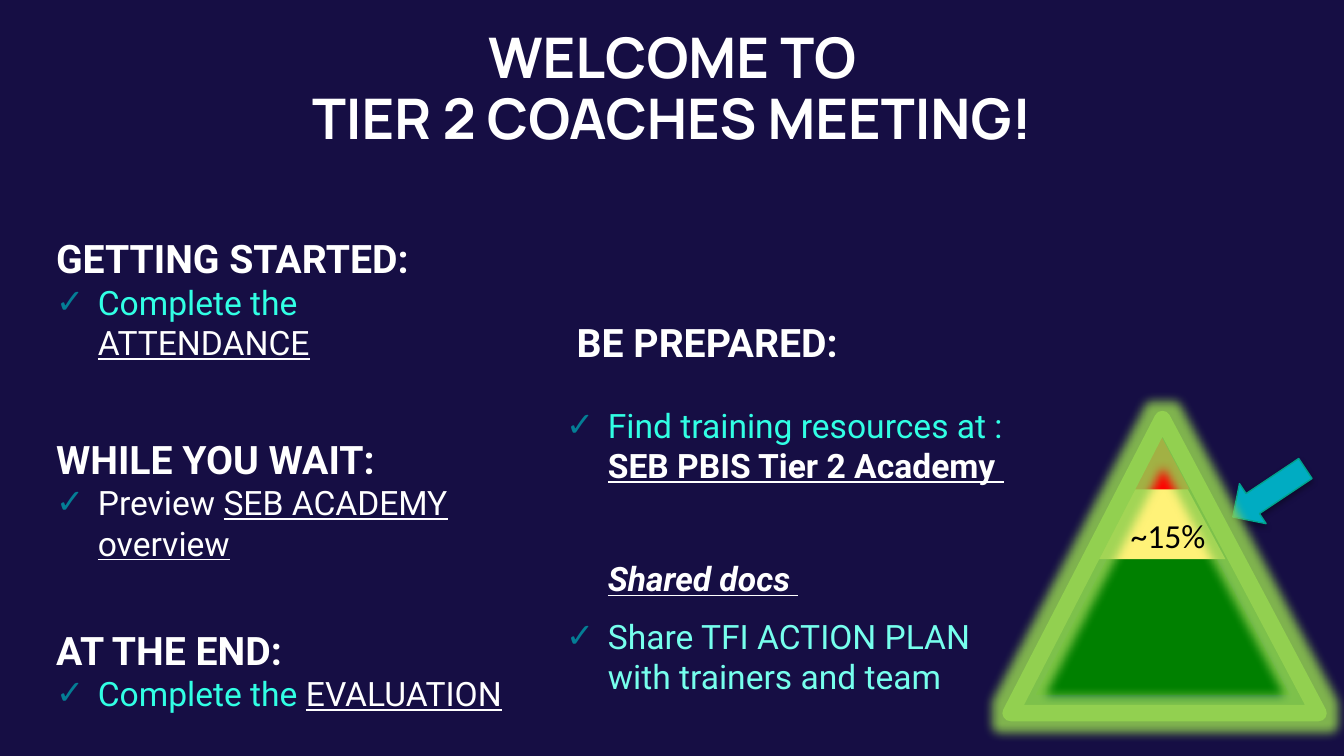
from lxml.etree import SubElement
from pptx import Presentation
from pptx.dml.color import RGBColor
from pptx.enum.shapes import MSO_SHAPE as Shape
from pptx.enum.text import MSO_ANCHOR as Anchor, PP_ALIGN as Align
from pptx.oxml.ns import qn
from pptx.util import Cm, Pt

COLORS = {
    "navy": "160E44", "white": "FFFFFF", "black": "000000",
    "mint": "31FFE4", "aqua": "76FFED", "check": "047E95",
    "arrow": "00ACC2", "arrow_edge": "00A38E",
    "green": "008000", "dark_green": "097233", "lime": "92D050",
    "yellow": "FFF278", "red": "FF0000",
}


def rgb(name):
    return RGBColor.from_string(COLORS[name])


def add_run(p, text, size=18, color="white", font="Roboto",
            bold=False, italic=False, underline=False):
    r = p.add_run()
    r.text = text
    f = r.font
    f.name, f.size, f.bold, f.italic = font, Pt(size), bold, italic
    f.underline = underline
    f.color.rgb = rgb(color)


def add_color(parent, name, alpha):
    clr = SubElement(parent, qn("a:srgbClr"), val=COLORS[name])
    SubElement(clr, qn("a:alpha"), val=str(alpha * 1000))


class Deck:
    def __init__(self):
        self.prs = Presentation()
        self.prs.slide_width, self.prs.slide_height = Cm(25.4), Cm(14.29)
        self.s = self.prs.slides.add_slide(self.prs.slide_layouts[6])
        self.s.background.fill.solid()
        self.s.background.fill.fore_color.rgb = rgb("navy")

    def text_box(self, box, inset=0.25, anchor=Anchor.TOP, shapes=None):
        sp = (shapes or self.s.shapes).add_textbox(*map(Cm, box))
        tf = sp.text_frame
        tf.word_wrap = True
        tf.vertical_anchor = anchor
        tf.margin_left = tf.margin_right = Cm(inset)
        tf.margin_top = tf.margin_bottom = Cm(inset)
        return tf

    def paragraph(self, tf, *runs, before=0, after=0, indent=0, check=False):
        p = tf.paragraphs[0]
        if p.runs:
            p = tf.add_paragraph()
        pPr = p._p.get_or_add_pPr()
        pPr.set("marL", str(Cm(indent)))
        pPr.set("indent", str(-Cm(indent) if check else 0))
        if check:
            clr = SubElement(pPr, qn("a:buClr"))
            SubElement(clr, qn("a:srgbClr"), val=COLORS["check"])
            SubElement(pPr, qn("a:buFont"), typeface="Roboto")
            SubElement(pPr, qn("a:buChar"), char="✓")
        p.space_before, p.space_after = Pt(before), Pt(after)
        for text, fmt in runs:
            add_run(p, text, **fmt)
        return p

    def heading(self, tf, text, **spacing):
        self.paragraph(tf, (text, dict(size=21, bold=True)), **spacing)

    def item(self, tf, *runs, check=True, before=0):
        self.paragraph(tf, *runs, before=before, after=9, indent=0.79, check=check)

    def shape(self, kind, box, fill=None, line=None, width=0, shapes=None):
        sp = (shapes or self.s.shapes).add_shape(kind, *map(Cm, box))
        sp.shadow.inherit = False
        if fill:
            sp.fill.solid()
            sp.fill.fore_color.rgb = rgb(fill)
        else:
            sp.fill.background()
        if line:
            sp.line.color.rgb = rgb(line)
            sp.line.width = Pt(width)
        else:
            sp.line.fill.background()
        return sp

    def triangle(self, box, **style):
        sp = self.shape(Shape.ISOSCELES_TRIANGLE, box, **style)
        sp.adjustments[0] = 0.493
        return sp

    def effect(self, sp, tag, color, alpha, **attrs):
        effects = sp.element.spPr.find(qn("a:effectLst"))
        node = SubElement(effects, qn(tag), {k: str(v) for k, v in attrs.items()})
        add_color(node, color, alpha)


def main():
    deck = Deck()
    mint, aqua = dict(color="mint"), dict(color="aqua")
    link = dict(underline=True)
    bold_link = dict(bold=True, underline=True)

    tf = deck.text_box((1.91, 0.33, 21.59, 2.84))
    title = dict(size=30, font="Manrope", bold=True)
    for line in ("WELCOME TO", "TIER 2 COACHES MEETING!"):
        p = deck.paragraph(tf, (line, title))
        p.alignment = Align.CENTER
        p.line_spacing = 0.9

    tf = deck.text_box((0.81, 3.38, 9.12, 10.36), anchor=Anchor.BOTTOM)
    deck.heading(tf, "GETTING STARTED:")
    deck.item(tf, ("Complete the ", mint), ("ATTENDANCE", link))
    deck.heading(tf, "WHILE YOU WAIT:", before=30)
    deck.item(tf, ("Preview ", {}), ("SEB ACADEMY overview", link))
    deck.heading(tf, "AT THE END:", before=25)
    deck.item(tf, ("Complete the ", mint), ("EVALUATION", link))

    arrow = deck.shape(Shape.LEFT_ARROW, (23.16, 8.86, 1.65, 0.91),
                       fill="arrow", line="arrow_edge", width=0.75)
    arrow.rotation = 326.3
    deck.effect(arrow, "a:outerShdw", "black", 35,
                blurRad=Pt(3.1), dist=Pt(1.8), dir=90 * 60000, rotWithShape=0)

    tiers = deck.s.shapes.add_group_shape().shapes
    deck.triangle((19.25, 8.2, 5.46, 5.13), fill="green",
                  line="dark_green", width=11, shapes=tiers)
    deck.triangle((20.75, 8.31, 2.41, 2.26), fill="yellow", shapes=tiers)
    deck.triangle((21.44, 8.26, 1.04, 0.99), fill="red", shapes=tiers)
    outline = deck.triangle((19.1, 7.92, 5.82, 5.56),
                            line="lime", width=8.75, shapes=tiers)
    deck.effect(outline, "a:glow", "lime", 85, rad=Pt(11))
    tf = deck.text_box((21.06, 9.6, 2.03, 1.02), inset=0.13, shapes=tiers)
    p = deck.paragraph(tf, ("~15%", dict(font="Calibri", color="black")))
    p.alignment = Align.CENTER

    tf = deck.text_box((10.52, 4.22, 9.32, 9.12), inset=0.18, anchor=Anchor.BOTTOM)
    deck.heading(tf, "BE PREPARED:", indent=0.2)
    deck.item(tf, ("Find training resources at : ", mint),
              ("SEB PBIS Tier 2 Academy ", bold_link), before=21)
    deck.item(tf, ("Shared docs ", dict(bold_link, italic=True)),
              check=False, before=30)
    deck.item(tf, ("Share TFI ACTION PLAN with trainers and team", aqua))

    deck.prs.save("out.pptx")


if __name__ == "__main__":
    main()
